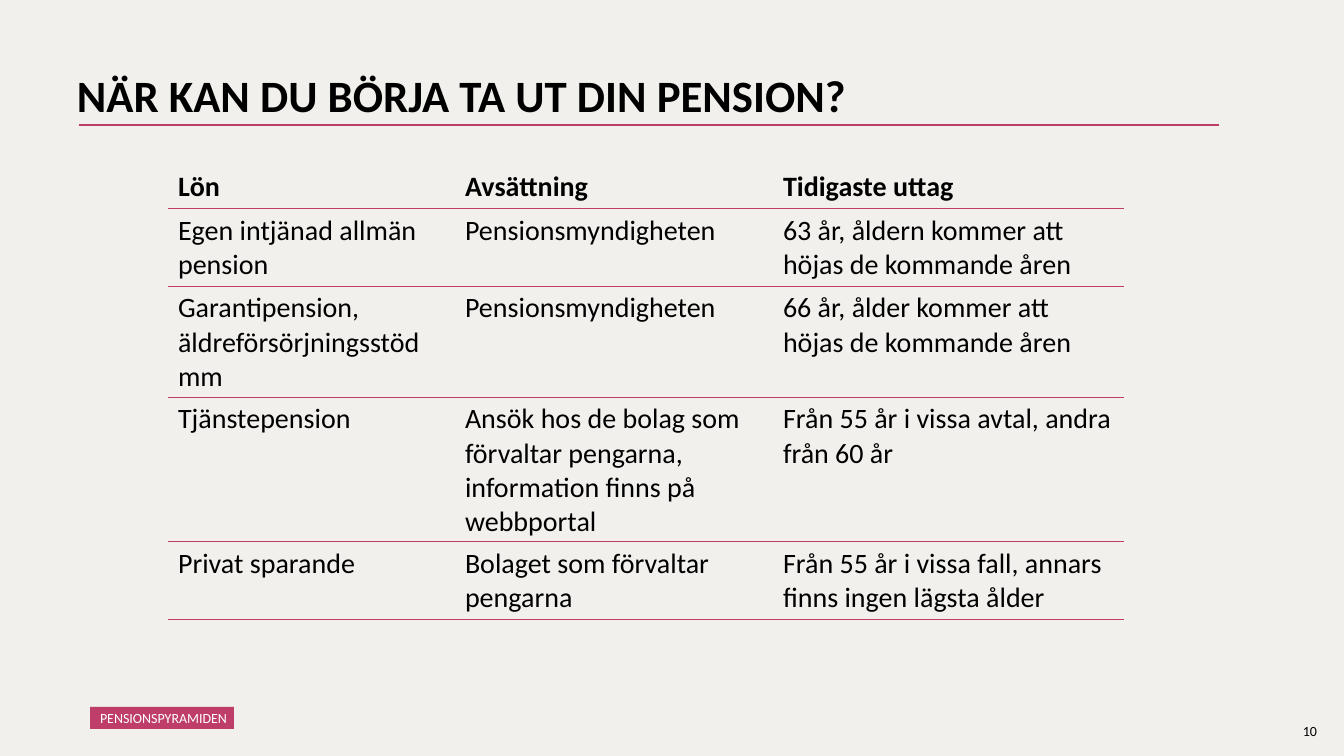
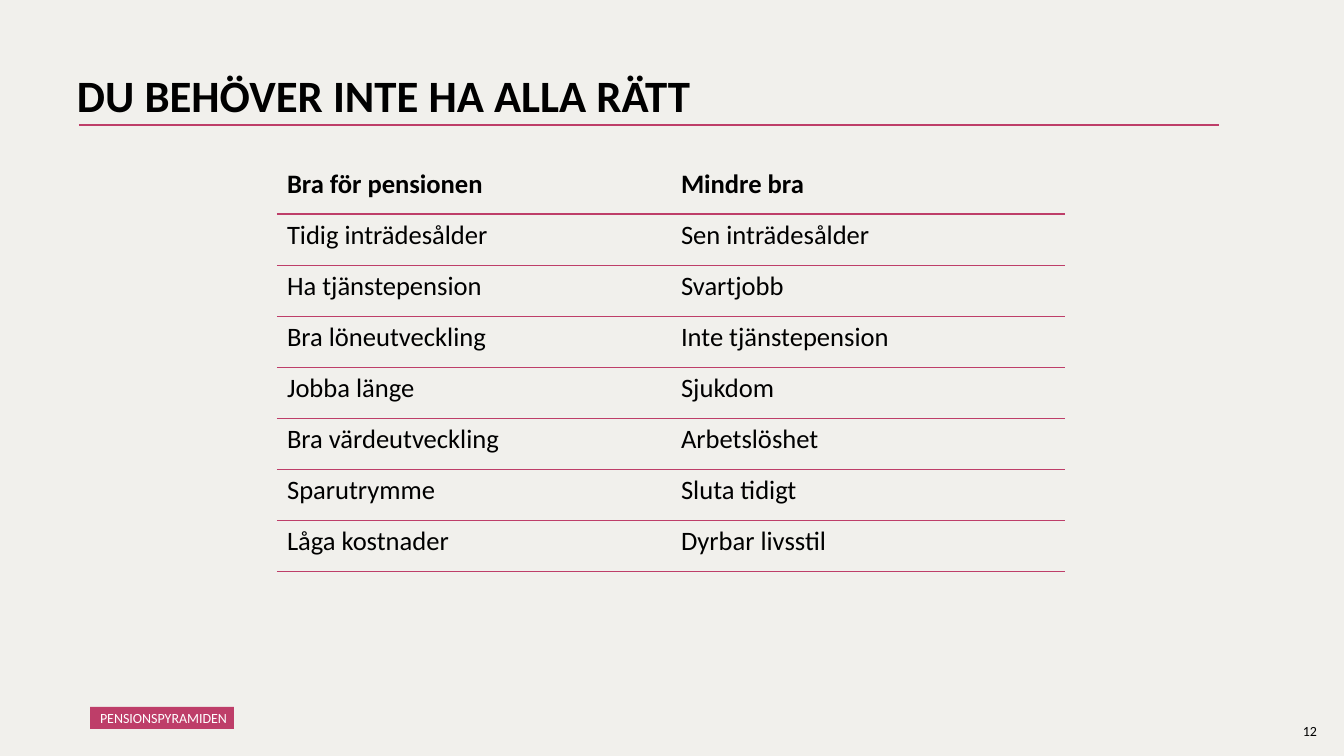
from lxml.etree import SubElement
from pptx import Presentation
from pptx.dml.color import RGBColor
from pptx.enum.shapes import MSO_CONNECTOR, MSO_SHAPE
from pptx.enum.text import MSO_ANCHOR, MSO_AUTO_SIZE, PP_ALIGN
from pptx.oxml import parse_xml
from pptx.oxml.ns import nsdecls, qn
from pptx.util import Emu, Pt

FONT = "Calibri"
BLACK = RGBColor(0x00, 0x00, 0x00)
WHITE = RGBColor(0xFF, 0xFF, 0xFF)
ROSE = RGBColor(0xBE, 0x3E, 0x69)
PAPER = RGBColor(0xF1, 0xF0, 0xEC)
NO_GRID_STYLE = "{2D5ABB26-0587-4C30-8999-92F81FD0307C}"
HEADER_RULE, ROW_RULE = Pt(1), Pt(0.5)

SLIDES = [
    {
        "title": "NÄR KAN DU BÖRJA TA UT DIN PENSION?",
        "number": "10",
        "origin": (168, 165),
        "columns": [287, 318, 351],
        "row_heights": [41, 73, 88, 115, 61],
        "size": 20,
        "rows": [
            ("Lön", "Avsättning", "Tidigaste uttag"),
            ("Egen intjänad allmän pension", "Pensionsmyndigheten",
             "63 år, åldern kommer att höjas de kommande åren"),
            ("Garantipension, äldreförsörjningsstöd mm", "Pensionsmyndigheten",
             "66 år, ålder kommer att höjas de kommande åren"),
            ("Tjänstepension",
             "Ansök hos de bolag som förvaltar pengarna, information finns på webbportal",
             "Från 55 år i vissa avtal, andra från 60 år"),
            ("Privat sparande", "Bolaget som förvaltar pengarna",
             "Från 55 år i vissa fall, annars finns ingen lägsta ålder"),
        ],
    },
    {
        "title": "DU BEHÖVER INTE HA ALLA RÄTT",
        "number": "12",
        "origin": (277, 163),
        "columns": [394, 394],
        "row_heights": [51] * 8,
        "size": 19,
        "rows": [
            ("Bra för pensionen", "Mindre bra"),
            ("Tidig inträdesålder", "Sen inträdesålder"),
            ("Ha tjänstepension", "Svartjobb"),
            ("Bra löneutveckling", "Inte tjänstepension"),
            ("Jobba länge", "Sjukdom"),
            ("Bra värdeutveckling", "Arbetslöshet"),
            ("Sparutrymme", "Sluta tidigt"),
            ("Låga kostnader", "Dyrbar livsstil"),
        ],
    },
]


def px(*lengths):
    """Turn pixels (1344 across the slide) into EMU."""
    return [Emu(round(length * 12192000 / 1344)) for length in lengths]


def write(frame, text, size, color=BLACK, bold=False):
    frame.word_wrap = True
    frame.text = text
    paragraph = frame.paragraphs[0]
    paragraph.alignment = PP_ALIGN.LEFT
    paragraph.font.name = FONT
    paragraph.font.size = Pt(size)
    paragraph.font.bold = bold
    paragraph.font.color.rgb = color
    return paragraph


deck = Presentation()
deck.slide_width, deck.slide_height = px(1344, 756)

for content in SLIDES:
    slide = deck.slides.add_slide(deck.slide_layouts[6])
    slide.background.fill.solid()
    slide.background.fill.fore_color.rgb = PAPER

    page_number = slide.shapes.add_textbox(*px(1293, 718, 40, 27))
    write(page_number.text_frame, content["number"], 10)
    page_number.text_frame.auto_size = MSO_AUTO_SIZE.SHAPE_TO_FIT_TEXT

    title_rule = slide.shapes.add_connector(
        MSO_CONNECTOR.STRAIGHT, *px(79, 125, 1219, 125))
    title_rule.line.color.rgb = ROSE
    title_rule.line.width = Pt(1.5)
    SubElement(title_rule._element.spPr, qn("a:effectLst"))

    title = slide.shapes.add_textbox(*px(67, 69, 1159, 146))
    write(title.text_frame, content["title"], 32, bold=True).line_spacing = 0.9

    # Table with horizontal rules only
    columns, heights = content["columns"], content["row_heights"]
    frame = slide.shapes.add_table(
        len(heights), len(columns),
        *px(*content["origin"], sum(columns), sum(heights)))
    table = frame.table
    table.horz_banding = False
    table._tbl.tblPr.find(qn("a:tableStyleId")).text = NO_GRID_STYLE
    for column, width in zip(table.columns, px(*columns)):
        column.width = width
    for row, height in zip(table.rows, px(*heights)):
        row.height = height
    for r, texts in enumerate(content["rows"]):
        rules = [("lnB", HEADER_RULE if r == 0 else ROW_RULE)]
        if r > 0:
            rules.insert(0, ("lnT", HEADER_RULE if r == 1 else ROW_RULE))
        for c, text in enumerate(texts):
            cell = table.cell(r, c)
            write(cell.text_frame, text, content["size"], bold=r == 0)
            properties = cell._tc.get_or_add_tcPr()
            for side, width in rules:
                properties.append(parse_xml(
                    f'<a:{side} {nsdecls("a")} w="{int(width)}"><a:solidFill>'
                    f'<a:srgbClr val="{ROSE}"/></a:solidFill></a:{side}>'))
            cell.fill.background()

    section = slide.shapes.add_shape(MSO_SHAPE.RECTANGLE, *px(90, 707, 144, 22))
    section.shadow.inherit = False
    section.fill.solid()
    section.fill.fore_color.rgb = ROSE
    section.line.fill.background()
    label = section.text_frame
    label.margin_left, label.margin_top, label.margin_right, label.margin_bottom = px(10, 8, 4, 5)
    label.vertical_anchor = MSO_ANCHOR.MIDDLE
    write(label, "PENSIONSPYRAMIDEN", 10, WHITE).line_spacing = 0.9

deck.save("out.pptx")
